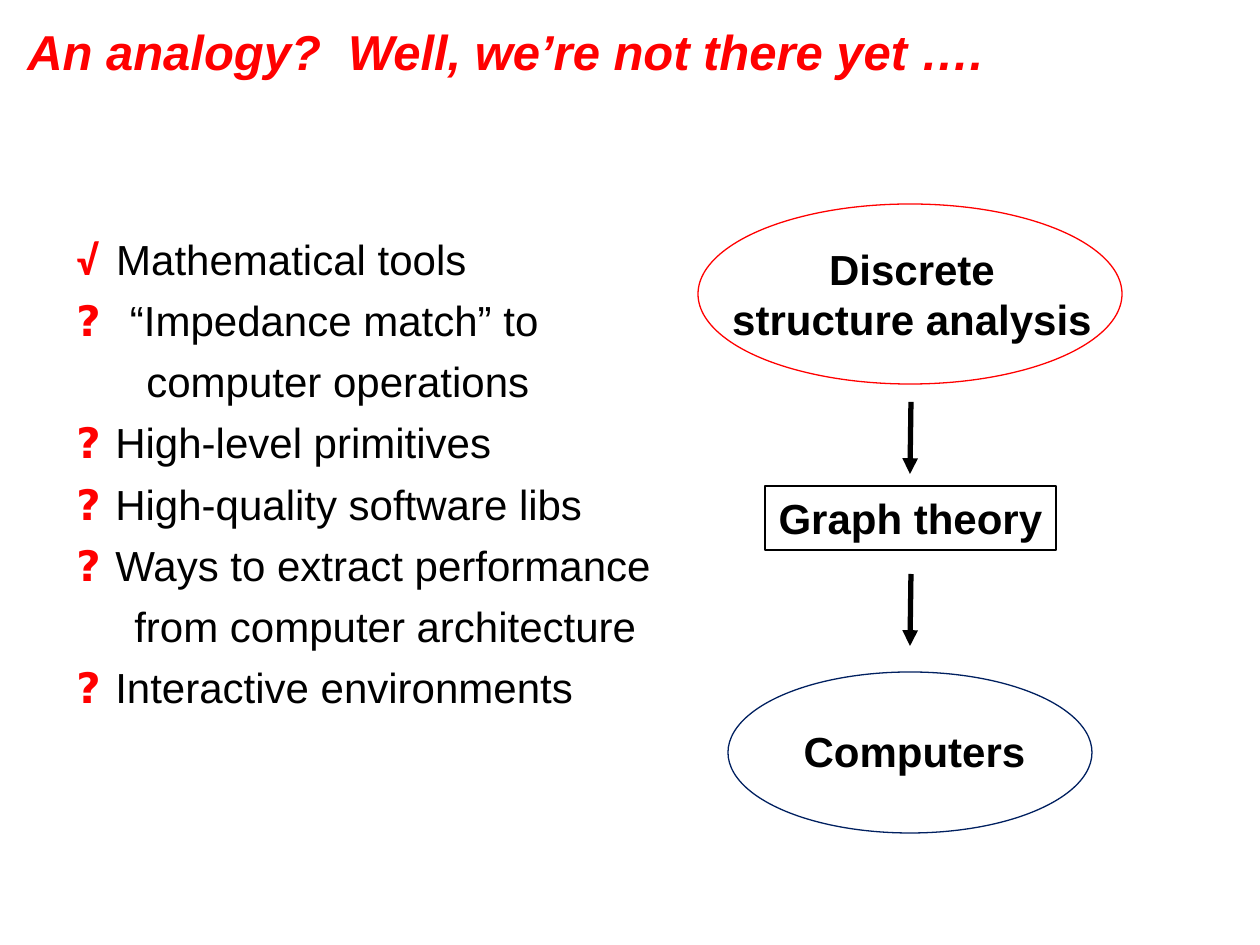
from dataclasses import dataclass

import pptx
import pptx.dml.color
import pptx.enum.shapes
import pptx.enum.text
import pptx.oxml
import pptx.oxml.ns
import pptx.util

SHAPE = pptx.enum.shapes.MSO_SHAPE
ALIGN = pptx.enum.text.PP_ALIGN
ANCHOR = pptx.enum.text.MSO_ANCHOR
EMU_PER_PX = 914400 / 126


@dataclass(frozen=True)
class Theme:
    red: str = "FF0000"
    navy: str = "002060"
    black: str = "000000"
    font: str = "Arial"
    check_font: str = "Calibri"
    question_font: str = "DejaVu Sans"
    title_size: int = 28
    body_size: int = 24
    line_spacing: int = 35
    outline: float = 0.75
    arrow: float = 3


THEME = Theme()


@dataclass(frozen=True)
class Area:
    left: int
    top: int
    width: int
    height: int


@dataclass(frozen=True)
class Outline:
    kind: SHAPE
    area: Area
    color: str


@dataclass(frozen=True)
class Label:
    text: str
    area: Area


@dataclass(frozen=True)
class Arrow:
    top: int
    bottom: int


@dataclass(frozen=True)
class Item:
    mark: str
    font: str
    lines: tuple[str, ...]
    continuation: int = 50  # left edge of wrapped lines, in px


OUTLINES = (
    Outline(SHAPE.OVAL, Area(698, 204, 424, 180), THEME.red),
    Outline(SHAPE.OVAL, Area(728, 672, 364, 161), THEME.navy),
    Outline(SHAPE.RECTANGLE, Area(765, 486, 291, 64), THEME.black),
)
LABELS = (
    Label("Discrete\vstructure analysis", Area(717, 237, 390, 115)),
    Label("Graph theory", Area(765, 486, 291, 64)),
    Label("Computers", Area(790, 719, 249, 64)),
)
ARROWS = (Arrow(402, 474), Arrow(574, 646))
ARROW_X = 910
MARK_INDENT = 12
ITEMS = (
    Item("√  ", THEME.check_font, ("Mathematical tools",)),
    Item("?  ", THEME.question_font, ("“Impedance match” to", "computer operations"), 82),
    Item("? ", THEME.question_font, ("High-level primitives",)),
    Item("? ", THEME.question_font, ("High-quality software libs",)),
    Item("? ", THEME.question_font,
         ("Ways to extract performance", "from computer architecture"), 70),
    Item("? ", THEME.question_font, ("Interactive environments",)),
)


def px(value: int) -> pptx.util.Emu:
    return pptx.util.Emu(round(value * EMU_PER_PX))


def place(area: Area) -> tuple:
    return px(area.left), px(area.top), px(area.width), px(area.height)


def rgb(color: str) -> pptx.dml.color.RGBColor:
    return pptx.dml.color.RGBColor.from_string(color)


def style(span, size: int, color: str = THEME.black, name: str = THEME.font,
          bold: bool = False, italic: bool = False) -> None:
    span.font.name = name
    span.font.size = pptx.util.Pt(size)
    span.font.bold = bold
    span.font.italic = italic
    span.font.color.rgb = rgb(color)


def add_text_box(page, area: Area, wrap: bool = False):
    box = page.shapes.add_textbox(*place(area))
    box.text_frame.word_wrap = wrap
    return box


def add_title(page, text: str) -> None:
    box = add_text_box(page, Area(15, 15, 1119, 71), wrap=True)
    box.text_frame.vertical_anchor = ANCHOR.MIDDLE
    box.text_frame.text = text
    style(box.text_frame.paragraphs[0].runs[0], THEME.title_size, THEME.red,
          bold=True, italic=True)


def add_outline(page, outline: Outline) -> None:
    shape = page.shapes.add_shape(outline.kind, *place(outline.area))
    shape.shadow.inherit = False
    shape.fill.background()
    shape.line.color.rgb = rgb(outline.color)
    shape.line.width = pptx.util.Pt(THEME.outline)


def add_label(page, label: Label) -> None:
    frame = add_text_box(page, label.area).text_frame
    frame.text = label.text
    para = frame.paragraphs[0]
    para.alignment = ALIGN.CENTER
    for span in para.runs:
        style(span, THEME.body_size, bold=True)


def add_arrow(page, arrow: Arrow) -> None:
    line = page.shapes.add_connector(
        pptx.enum.shapes.MSO_CONNECTOR.STRAIGHT,
        px(ARROW_X + 1), px(arrow.top), px(ARROW_X), px(arrow.bottom))
    line.line.color.rgb = rgb(THEME.black)
    line.line.width = pptx.util.Pt(THEME.arrow)
    head = pptx.oxml.parse_xml(
        f'<a:tailEnd {pptx.oxml.ns.nsdecls("a")} type="triangle"/>')
    line.line._get_or_add_ln().append(head)
    effects = pptx.oxml.parse_xml(f'<a:effectLst {pptx.oxml.ns.nsdecls("a")}/>')
    line._element.spPr.append(effects)


def add_item(para, item: Item) -> None:
    """Write a coloured mark and its text, with a hanging indent for later lines."""
    para.line_spacing = pptx.util.Pt(THEME.line_spacing)
    properties = para._p.get_or_add_pPr()
    properties.set("marL", str(px(item.continuation)))
    properties.set("indent", str(px(MARK_INDENT - item.continuation)))
    mark = para.add_run()
    mark.text = item.mark
    style(mark, THEME.body_size, THEME.red, item.font, bold=True)
    for number, text in enumerate(item.lines):
        if number:
            para.add_line_break()
        span = para.add_run()
        span.text = text
        style(span, THEME.body_size)


def add_checklist(page, items: tuple[Item, ...]) -> None:
    frame = add_text_box(page, Area(52, 216, 619, 508)).text_frame
    for number, item in enumerate(items):
        add_item(frame.add_paragraph() if number else frame.paragraphs[0], item)


def main() -> None:
    deck = pptx.Presentation()
    deck.slide_width = px(1260)
    deck.slide_height = px(945)
    page = deck.slides.add_slide(deck.slide_layouts[6])
    add_title(page, "An analogy?  Well, we’re not there yet ….")
    for outline in OUTLINES:
        add_outline(page, outline)
    for label in LABELS:
        add_label(page, label)
    for arrow in ARROWS:
        add_arrow(page, arrow)
    add_checklist(page, ITEMS)
    deck.save("out.pptx")


if __name__ == "__main__":
    main()
